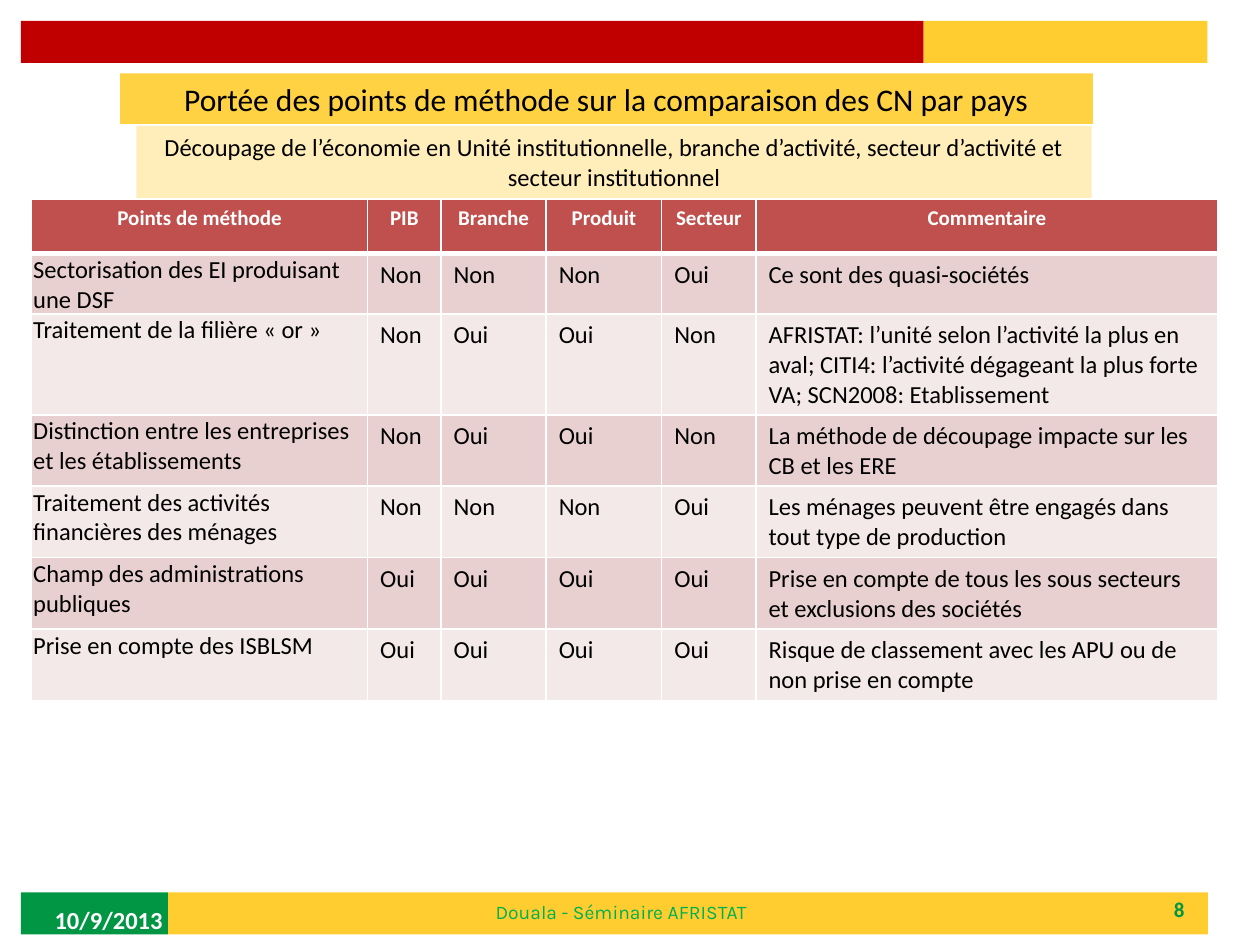
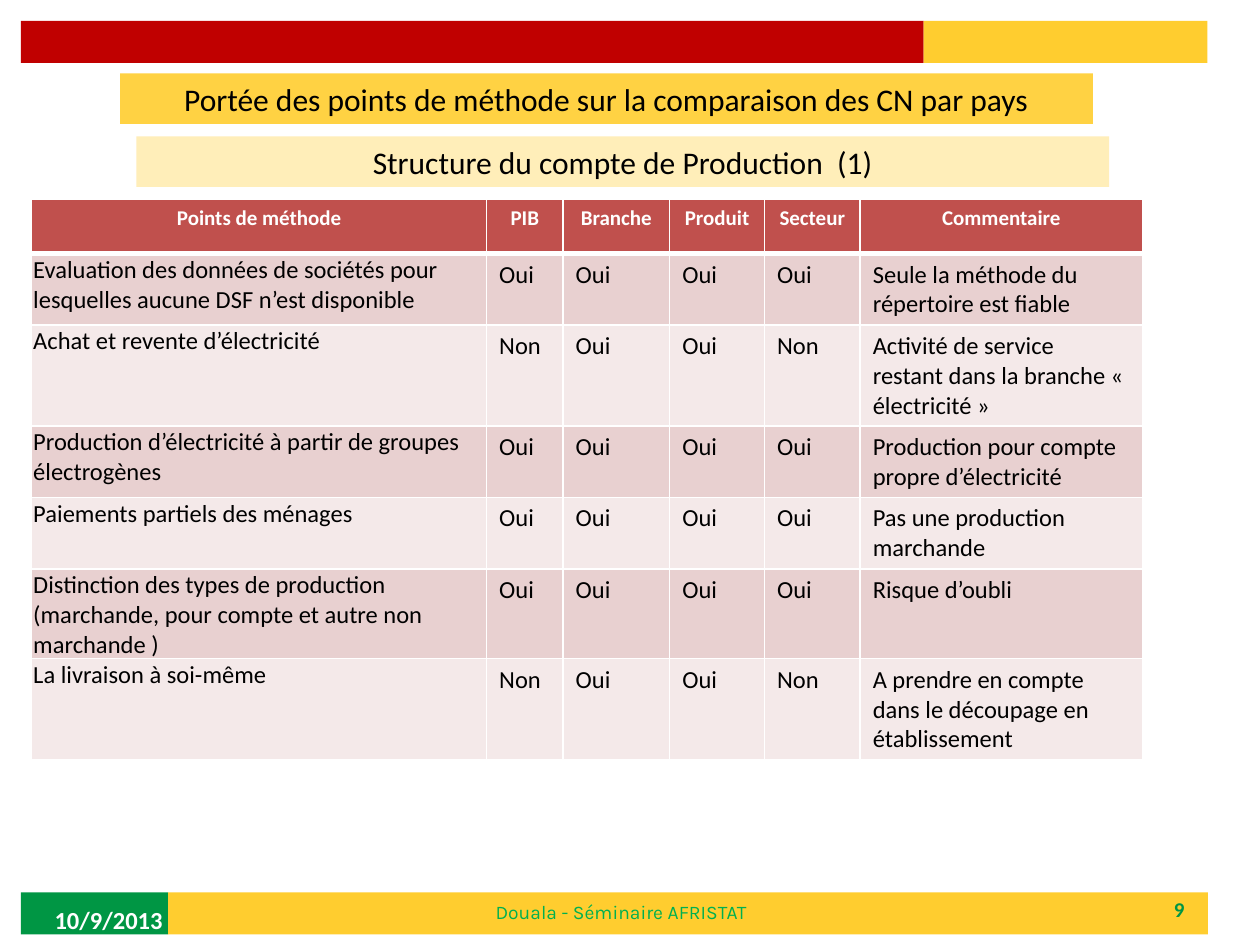
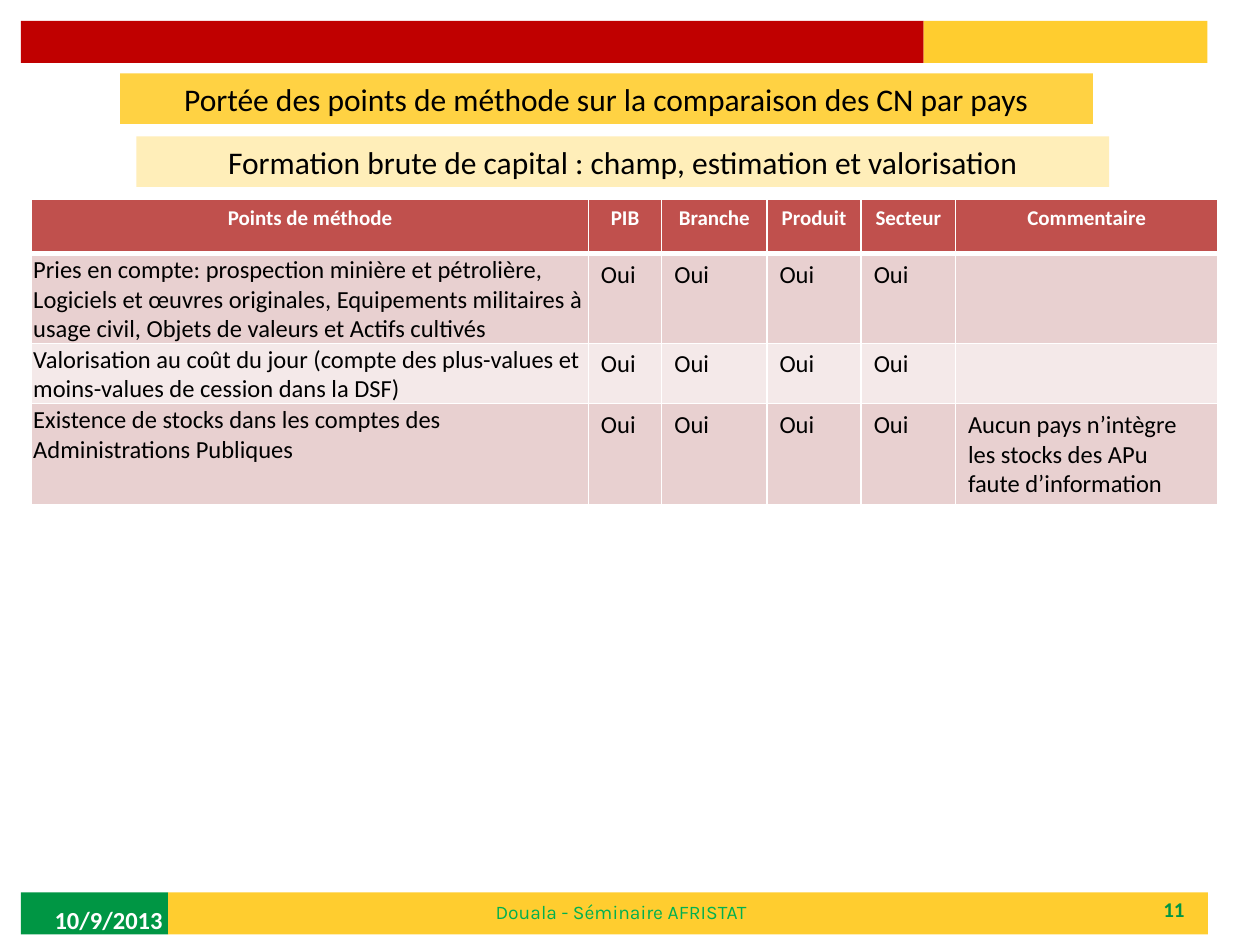
from lxml import etree
from pptx import Presentation
from pptx.dml.color import RGBColor
from pptx.enum.shapes import MSO_SHAPE
from pptx.enum.text import MSO_ANCHOR, MSO_AUTO_SIZE, PP_ALIGN
from pptx.oxml.ns import qn
from pptx.util import Cm, Pt

RECTANGLE = MSO_SHAPE.RECTANGLE
TOP, MIDDLE = MSO_ANCHOR.TOP, MSO_ANCHOR.MIDDLE
LEFT, CENTER, RIGHT = PP_ALIGN.LEFT, PP_ALIGN.CENTER, PP_ALIGN.RIGHT
NO_RESIZE = MSO_AUTO_SIZE.NONE

RED, YELLOW, GREEN = "C00000", "FFCD2F", "009644"
TITLE_FILL, SUBTITLE_FILL = "FFD243", "FFEEB9"
HEADER_FILL, BODY_FILLS = "C0504D", ("E8D0D0", "F4E9E9")
FOOTER_COLOR, BLACK, WHITE = "00B050", "000000", "FFFFFF"

BANDS = [
    (0.42, 17.99, 2.97, 0.85, GREEN),
    (3.39, 17.99, 20.96, 0.85, YELLOW),
    (0.42, 0.42, 18.2, 0.85, RED),
    (18.62, 0.42, 5.72, 0.85, YELLOW),
]
TITLE = "Portée des points de méthode sur la comparaison des CN par pays"
HEADERS = ["Points de méthode", "PIB", "Branche", "Produit", "Secteur", "Commentaire"]
HEADER_HEIGHT, ROW_HEIGHT = 1.09, 1.21

SLIDES = [
    {
        "number": "8",
        "subtitle": "Découpage de l’économie en Unité institutionnelle, branche d’activité, "
                    "secteur d’activité et secteur institutionnel",
        "subtitle_place": (2.75, 2.54, 19.26, 1.45),
        "subtitle_size": 14,
        "widths": [6.77, 1.48, 2.12, 2.33, 1.9, 9.31],
        "rows": [
            ("Sectorisation des EI produisant une DSF", "Non Non Non Oui",
             "Ce sont des quasi-sociétés"),
            ("Traitement de la filière « or »", "Non Oui Oui Non",
             "AFRISTAT: l’unité selon l’activité la plus en aval; CITI4: l’activité "
             "dégageant la plus forte VA; SCN2008: Etablissement"),
            ("Distinction entre les entreprises et les établissements", "Non Oui Oui Non",
             "La méthode de découpage impacte sur les CB et les ERE"),
            ("Traitement des activités financières des ménages", "Non Non Non Oui",
             "Les ménages peuvent être engagés dans tout type de production"),
            ("Champ des administrations publiques", "Oui Oui Oui Oui",
             "Prise en compte de tous les sous secteurs et exclusions des sociétés"),
            ("Prise en compte des ISBLSM", "Oui Oui Oui Oui",
             "Risque de classement avec les APU ou de non prise en compte"),
        ],
    },
    {
        "number": "9",
        "subtitle": "Structure du compte de Production  (1)",
        "subtitle_place": (2.75, 2.75, 19.61, 1.02),
        "subtitle_size": 18,
        "widths": [9.17, 1.54, 2.15, 1.91, 1.93, 5.69],
        "rows": [
            ("Evaluation des données de sociétés pour lesquelles aucune DSF n’est disponible",
             "Oui Oui Oui Oui", "Seule la méthode du répertoire est fiable"),
            ("Achat et revente d’électricité", "Non Oui Oui Non",
             "Activité de service restant dans la branche « électricité »"),
            ("Production d’électricité à partir de groupes électrogènes", "Oui Oui Oui Oui",
             "Production pour compte propre d’électricité"),
            ("Paiements partiels des ménages", "Oui Oui Oui Oui",
             "Pas une production marchande"),
            ("Distinction des types de production (marchande, pour compte et autre non marchande )",
             "Oui Oui Oui Oui", "Risque d’oubli"),
            ("La livraison à soi-même", "Non Oui Oui Non",
             "A prendre en compte dans le découpage en établissement"),
        ],
    },
    {
        "number": "11",
        "subtitle": "Formation brute de capital : champ, estimation et valorisation",
        "subtitle_place": (2.75, 2.75, 19.61, 1.02),
        "subtitle_size": 18,
        "widths": [11.22, 1.48, 2.12, 1.9, 1.9, 5.29],
        "rows": [
            ("Pries en compte: prospection minière et pétrolière, Logiciels et œuvres "
             "originales, Equipements militaires à usage civil, Objets de valeurs et "
             "Actifs cultivés", "Oui Oui Oui Oui", ""),
            ("Valorisation au coût du jour (compte des plus-values et moins-values de "
             "cession dans la DSF)", "Oui Oui Oui Oui", ""),
            ("Existence de stocks dans les comptes des Administrations Publiques",
             "Oui Oui Oui Oui",
             "Aucun pays n’intègre les stocks des APu faute d’information"),
        ],
    },
]


def rgb(value):
    return RGBColor.from_string(value)


def paint(target, color):
    target.fill.solid()
    target.fill.fore_color.rgb = rgb(color)


def write(frame, text, size=14, color=BLACK, bold=False, align=LEFT, font="Calibri"):
    paragraph = frame.paragraphs[0]
    paragraph.alignment = align
    span = paragraph.add_run()
    span.text = text
    span.font.name = font
    span.font.size = Pt(size)
    span.font.bold = bold
    span.font.color.rgb = rgb(color)


def add_band(page, left, top, width, height, color):
    band = page.shapes.add_shape(RECTANGLE, Cm(left), Cm(top), Cm(width), Cm(height))
    band.shadow.inherit = False
    band.line.fill.background()
    paint(band, color)
    return band


def add_label(page, text, place, anchor=MIDDLE, wrap=True, **style):
    box = page.shapes.add_textbox(*map(Cm, place))
    box.text_frame.word_wrap = wrap
    box.text_frame.vertical_anchor = anchor
    write(box.text_frame, text, **style)


def set_title(page):
    title = page.shapes.title
    title.left, title.top, title.width, title.height = map(Cm, (2.42, 1.48, 19.61, 1.02))
    paint(title, TITLE_FILL)
    frame = title.text_frame
    frame.auto_size = NO_RESIZE
    frame.vertical_anchor = TOP
    write(frame, TITLE, size=18, align=CENTER)


def add_subtitle(page, text, place, size):
    frame = add_band(page, *place, SUBTITLE_FILL).text_frame
    frame.word_wrap = True
    frame.vertical_anchor = TOP
    write(frame, text, size=size, align=CENTER)


def set_borders(cell, top, bottom):
    properties = cell._tc.get_or_add_tcPr()
    for side, width in (("L", 1), ("R", 1), ("T", top), ("B", bottom)):
        line = etree.SubElement(properties, qn(f"a:ln{side}"), w=str(Pt(width)))
        fill = etree.SubElement(line, qn("a:solidFill"))
        etree.SubElement(fill, qn("a:srgbClr"), val=WHITE)


def fill_cell(cell, text, row, column):
    set_borders(cell, top=3 if row == 1 else 1, bottom=3 if row == 0 else 1)
    paint(cell, BODY_FILLS[(row - 1) % 2] if row else HEADER_FILL)
    if row and column == 0:
        cell.margin_left = cell.margin_right = cell.margin_top = Cm(0.03)
        cell.margin_bottom = 0
    if row == 0:
        write(cell.text_frame, text, size=12, color=WHITE, bold=True, align=CENTER)
    elif text:
        write(cell.text_frame, text)


def add_method_table(page, widths, rows):
    records = [HEADERS] + [[point, *impacts.split(), comment] for point, impacts, comment in rows]
    heights = [HEADER_HEIGHT] + [ROW_HEIGHT] * len(rows)
    table = page.shapes.add_table(len(records), len(widths), Cm(0.64), Cm(4.02),
                                  Cm(sum(widths)), Cm(sum(heights))).table
    table.horz_banding = False
    for column, width in zip(table.columns, widths):
        column.width = Cm(width)
    for row, (record, height) in enumerate(zip(records, heights)):
        table.rows[row].height = Cm(height)
        for column, text in enumerate(record):
            fill_cell(table.cell(row, column), text, row, column)


def add_frame(page, number):
    for band in BANDS:
        add_band(page, *band)
    add_label(page, number, (18.2, 17.99, 5.93, 0.69),
              size=12, color=GREEN, bold=True, align=RIGHT)
    add_label(page, "10/9/2013", (0.85, 18.03, 5.93, 1.02), color=WHITE, bold=True)
    add_label(page, "Douala - Séminaire AFRISTAT", (9.74, 18.03, 5.66, 0.73),
              anchor=TOP, wrap=False, size=11, color=FOOTER_COLOR, font="Karla")


def main():
    deck = Presentation()
    deck.slide_width, deck.slide_height = Cm(25.4), Cm(19.05)
    title_only = deck.slide_layouts[5]
    for content in SLIDES:
        page = deck.slides.add_slide(title_only)
        add_frame(page, content["number"])
        set_title(page)
        add_method_table(page, content["widths"], content["rows"])
        add_subtitle(page, content["subtitle"], content["subtitle_place"],
                     content["subtitle_size"])
    deck.save("out.pptx")


if __name__ == "__main__":
    main()
